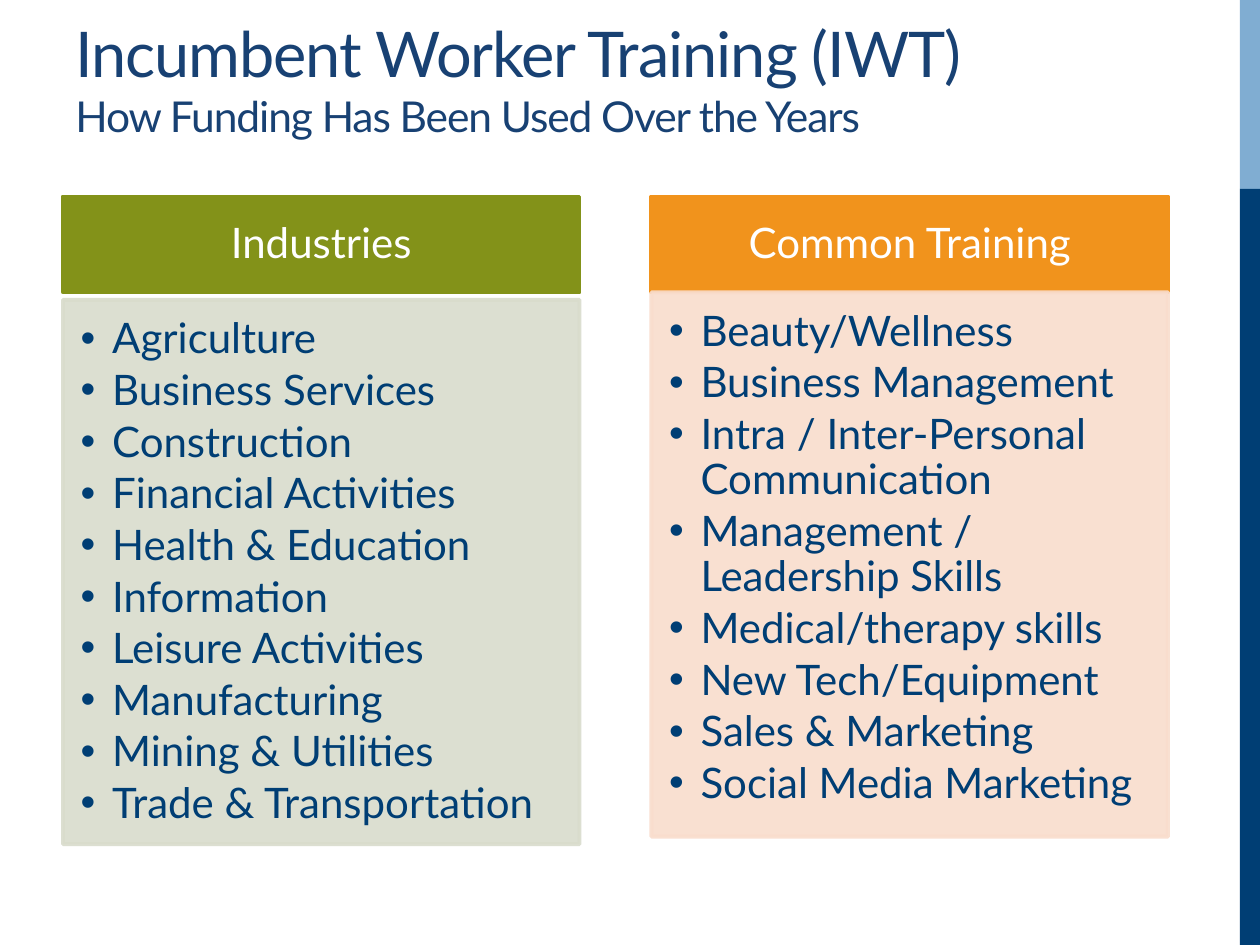
from lxml.etree import SubElement
from pptx import Presentation
from pptx.dml.color import RGBColor
from pptx.enum.shapes import MSO_SHAPE as SHAPE
from pptx.enum.text import MSO_ANCHOR as ANCHOR, PP_ALIGN as ALIGN
from pptx.oxml.ns import qn
from pptx.util import Inches, Pt

COLORS = {
    "title": "184173", "navy": "003E74", "sky": "80ADD2", "white": "FFFFFF",
    "green": "839219", "sage": "D9DCCC", "orange": "F1931C", "peach": "F9DDCD",
}
HEAD_H, BODY_H = 0.76, 4.32
COLUMNS = [
    (0.5, 2.38, "green", "sage", "Industries", [
        "Agriculture", "Business Services", "Construction",
        "Financial Activities", "Health & Education", "Information",
        "Leisure Activities", "Manufacturing", "Mining & Utilities",
        "Trade & Transportation"]),
    (5.17, 2.32, "orange", "peach", "Common Training", [
        "Beauty/Wellness", "Business Management",
        "Intra / Inter-Personal Communication",
        "Management / Leadership Skills", "Medical/therapy skills",
        "New Tech/Equipment", "Sales & Marketing",
        "Social Media Marketing"]),
]


def rgb(name):
    """Return the named palette colour."""
    return RGBColor.from_string(COLORS[name])


def apply(target, **values):
    """Set each given format value on the target."""
    for key, value in values.items():
        setattr(target, key, value)


def style_font(font, size, color):
    """Give a font the slide's typeface, a size and a colour."""
    apply(font, name="Lato", size=Pt(size))
    font.color.rgb = rgb(color)


def add_block(s, box, color, outlined=True, alpha=None):
    """Add a flat rectangle, optionally outlined and translucent."""
    sp = s.shapes.add_shape(SHAPE.RECTANGLE, *map(Inches, box))
    sp.shadow.inherit = False
    sp.fill.solid()
    sp.fill.fore_color.rgb = rgb(color)
    if outlined:
        sp.line.color.rgb = rgb(color)
        sp.line.width = Pt(2.25)
    else:
        sp.line.fill.background()
    if alpha:
        for clr in sp._element.spPr.iter(qn("a:srgbClr")):
            SubElement(clr, qn("a:alpha"), val=str(alpha * 1000))
    return sp


def set_frame(sp, insets, anchor):
    """Set wrapping, anchor and left, top, right, bottom insets."""
    tf = sp.text_frame
    sides = ("margin_left", "margin_top", "margin_right", "margin_bottom")
    apply(tf, word_wrap=True, vertical_anchor=anchor,
          **dict(zip(sides, map(Inches, insets))))
    return tf


def add_bullet(p):
    """Give a paragraph a hanging round bullet."""
    pPr = p._p.get_or_add_pPr()
    pPr.set("marL", str(Inches(0.25)))
    pPr.set("indent", str(Inches(-0.25)))
    SubElement(pPr, qn("a:buFont"), typeface="Arial")
    SubElement(pPr, qn("a:buChar"), char="•")


def add_title(s, box, title, subtitle):
    """Add the title and its smaller second line."""
    sp = s.shapes.add_textbox(*map(Inches, box))
    tf = set_frame(sp, (0.1, 0.05, 0.1, 0.05), ANCHOR.BOTTOM)
    p = tf.paragraphs[0]
    for text, size in ((title, 36), (subtitle, 24.3)):
        if p.runs:
            p.add_line_break()
        r = p.add_run()
        r.text = text
        style_font(r.font, size, "title")
        r.font._element.set("spc", "-60")


def add_header(s, box, color, text):
    """Add a column header bar."""
    sp = add_block(s, box, color)
    tf = set_frame(sp, (0.19, 0.11, 0.19, 0.11), ANCHOR.MIDDLE)
    p = tf.paragraphs[0]
    p.text = text
    apply(p, alignment=ALIGN.CENTER, line_spacing=0.9)
    style_font(p.runs[0].font, 24, "white")


def add_list(s, box, color, items):
    """Add a tinted panel with a bulleted list."""
    sp = add_block(s, box, color, alpha=90)
    tf = set_frame(sp, (0.14, 0.14, 0.19, 0.21), ANCHOR.TOP)
    for i, item in enumerate(items):
        p = tf.add_paragraph() if i else tf.paragraphs[0]
        p.text = item
        add_bullet(p)
        apply(p, alignment=ALIGN.LEFT, line_spacing=0.9, space_after=Pt(3.6))
        style_font(p.runs[0].font, 24, "navy")


def add_side_bar(s, box):
    """Add the two-tone bar, one fifth light and the rest dark."""
    x, y, w, h = box
    split = h / 5
    add_block(s, (x, y, w, split), "sky", outlined=False)
    add_block(s, (x, y + split, w, h - split), "navy", outlined=False)


def main():
    """Build and save the slide."""
    prs = Presentation()
    apply(prs, slide_width=Inches(10), slide_height=Inches(7.5))
    s = prs.slides.add_slide(prs.slide_layouts[6])
    add_side_bar(s, (9.84, 0, 0.16, 7.5))
    add_title(s, (0.5, 0.17, 8.33, 1), "Incumbent Worker Training (IWT)",
              "How Funding Has Been Used Over the Years")
    for x, body_y, head_color, body_color, heading, items in COLUMNS:
        add_header(s, (x, 1.56, 4.1, HEAD_H), head_color, heading)
        add_list(s, (x, body_y, 4.1, BODY_H), body_color, items)
    prs.save("out.pptx")


if __name__ == "__main__":
    main()
